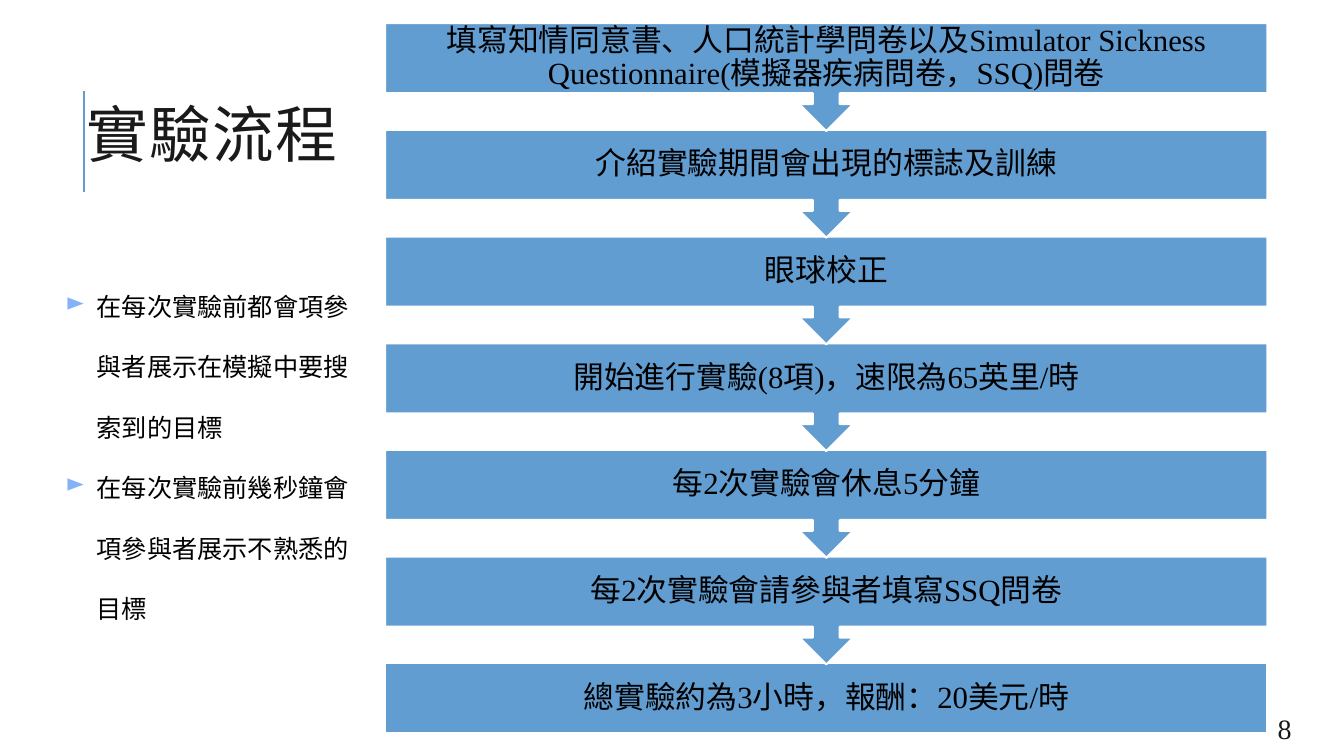
from dataclasses import dataclass

from lxml import etree
from pptx import Presentation
from pptx import util as u
from pptx.dml.color import RGBColor
from pptx.enum import shapes, text
from pptx.oxml import ns

Inches, Pt = u.Inches, u.Pt


@dataclass(frozen=True)
class Theme:
    font: str = "Times New Roman"
    blue: str = "629DD1"
    bullet: str = "85B2F6"
    dark: str = "1A1A1A"
    black: str = "000000"
    white: str = "FFFFFF"
    title: int = 44
    step: int = 22
    number: int = 20
    body: int = 18
    line: float = 1.5


THEME = Theme()

STEPS = [
    "填寫知情同意書、人口統計學問卷以及Simulator Sickness Questionnaire(模擬器疾病問卷，SSQ)問卷",
    "介紹實驗期間會出現的標誌及訓練",
    "眼球校正",
    "開始進行實驗(8項)，速限為65英里/時",
    "每2次實驗會休息5分鐘",
    "每2次實驗會請參與者填寫SSQ問卷",
    "總實驗約為3小時，報酬：20美元/時",
]
NOTES = [
    "在每次實驗前都會項參與者展示在模擬中要搜索到的目標",
    "在每次實驗前幾秒鐘會項參與者展示不熟悉的目標",
]

# Flow geometry in inches
FLOW_LEFT, FLOW_WIDTH = 3.82, 8.75
FIRST_TOP, LAST_TOP = 0.23, 6.58
BOX_HEIGHT, CALLOUT_HEIGHT = 0.69, 1.07


def rgb(color):
    return RGBColor.from_string(color)


def add_bullet(p):
    pPr = p._p.get_or_add_pPr()
    pPr.set("marL", str(Inches(0.86)))
    pPr.set("indent", str(Inches(-0.31)))
    buClr = etree.SubElement(pPr, ns.qn("a:buClr"))
    etree.SubElement(buClr, ns.qn("a:srgbClr"), val=THEME.bullet)
    etree.SubElement(pPr, ns.qn("a:buChar"), char="►")


def add_text(s, box, paragraphs, *, size, color=THEME.black, align=None,
             anchor=text.MSO_ANCHOR.MIDDLE, line_spacing=None, inset=None,
             bullets=False, tracking=None):
    tf = s.shapes.add_textbox(*map(Inches, box)).text_frame
    tf.word_wrap = True
    tf.vertical_anchor = anchor
    if inset is not None:
        tf.margin_left = tf.margin_right = Inches(inset)
        tf.margin_top = tf.margin_bottom = Inches(inset)
    for i, words in enumerate(paragraphs):
        p = tf.add_paragraph() if i else tf.paragraphs[0]
        if bullets:
            add_bullet(p)
        p.alignment = align
        p.line_spacing = line_spacing
        r = p.add_run()
        r.text = words
        r.font.name = THEME.font
        r.font.size = Pt(size)
        r.font.color.rgb = rgb(color)
        if tracking:
            r._r.get_or_add_rPr().set("spc", str(tracking * 100))


def add_block(s, preset, box, rotation=0):
    sp = s.shapes.add_shape(preset, *map(Inches, box))
    sp.rotation = rotation
    sp.shadow.inherit = False
    sp.fill.solid()
    sp.fill.fore_color.rgb = rgb(THEME.blue)
    sp.line.color.rgb = rgb(THEME.white)
    sp.line.width = Pt(THEME.line)


def add_rule(s, x, top, bottom):
    line = s.shapes.add_connector(shapes.MSO_CONNECTOR.STRAIGHT,
                                  *map(Inches, (x, bottom, x, top)))
    line.line.color.rgb = rgb(THEME.blue)
    line.line.width = Pt(THEME.line)
    etree.SubElement(line._element.spPr, ns.qn("a:effectLst"))


def add_flow(s):
    pitch = (LAST_TOP - FIRST_TOP) / (len(STEPS) - 1)
    last = len(STEPS) - 1
    # Drawn from the bottom up so each arrow lies over the next box
    for i in range(last, -1, -1):
        top = FIRST_TOP + i * pitch
        box = (FLOW_LEFT, top, FLOW_WIDTH, BOX_HEIGHT)
        if i == last:
            add_block(s, shapes.MSO_SHAPE.RECTANGLE, box)
        else:
            add_block(s, shapes.MSO_SHAPE.UP_ARROW_CALLOUT,
                      (FLOW_LEFT, top, FLOW_WIDTH, CALLOUT_HEIGHT), 180)
        add_text(s, box, [STEPS[i]], size=THEME.step, inset=0.17,
                 align=text.PP_ALIGN.CENTER, line_spacing=0.9)


def main():
    prs = Presentation()
    prs.slide_width, prs.slide_height = Inches(13.33), Inches(7.5)
    s = prs.slides.add_slide(prs.slide_layouts[6])

    # Title with its vertical rule
    add_rule(s, 0.83, 0.9, 1.9)
    add_text(s, (0.76, 0.88, 10.63, 1.02), ["實驗流程"], size=THEME.title,
             color=THEME.dark, line_spacing=0.8, tracking=1)

    # Experiment steps
    add_flow(s)

    # Page number and side notes
    add_text(s, (11.85, 7.08, 1.06, 0.3), ["8"], size=THEME.number,
             color=THEME.dark, align=text.PP_ALIGN.RIGHT)
    add_text(s, (0, 2.54, 3.61, 4.25), NOTES, size=THEME.body, bullets=True,
             anchor=text.MSO_ANCHOR.TOP, line_spacing=2.0)

    prs.save("out.pptx")


if __name__ == "__main__":
    main()
